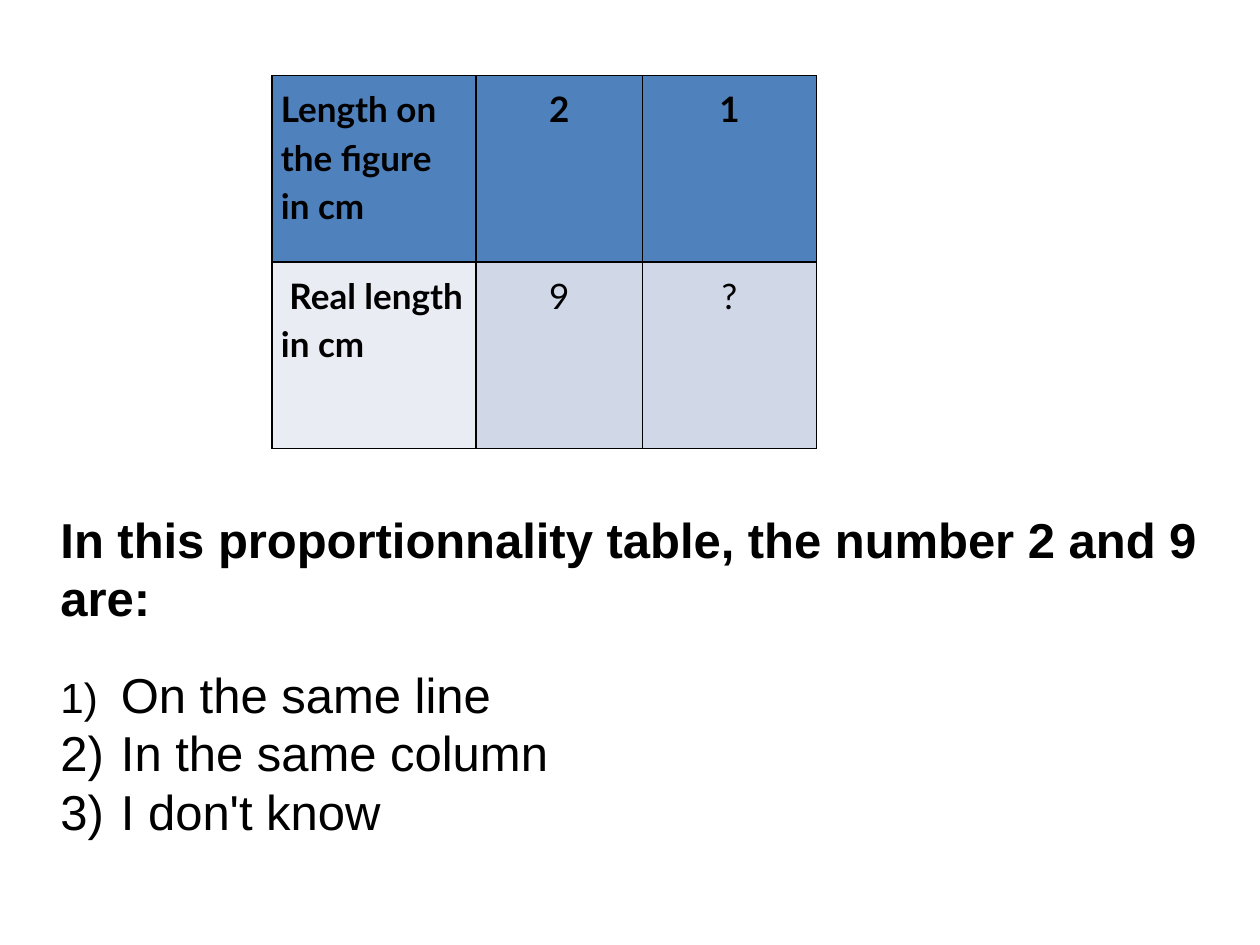
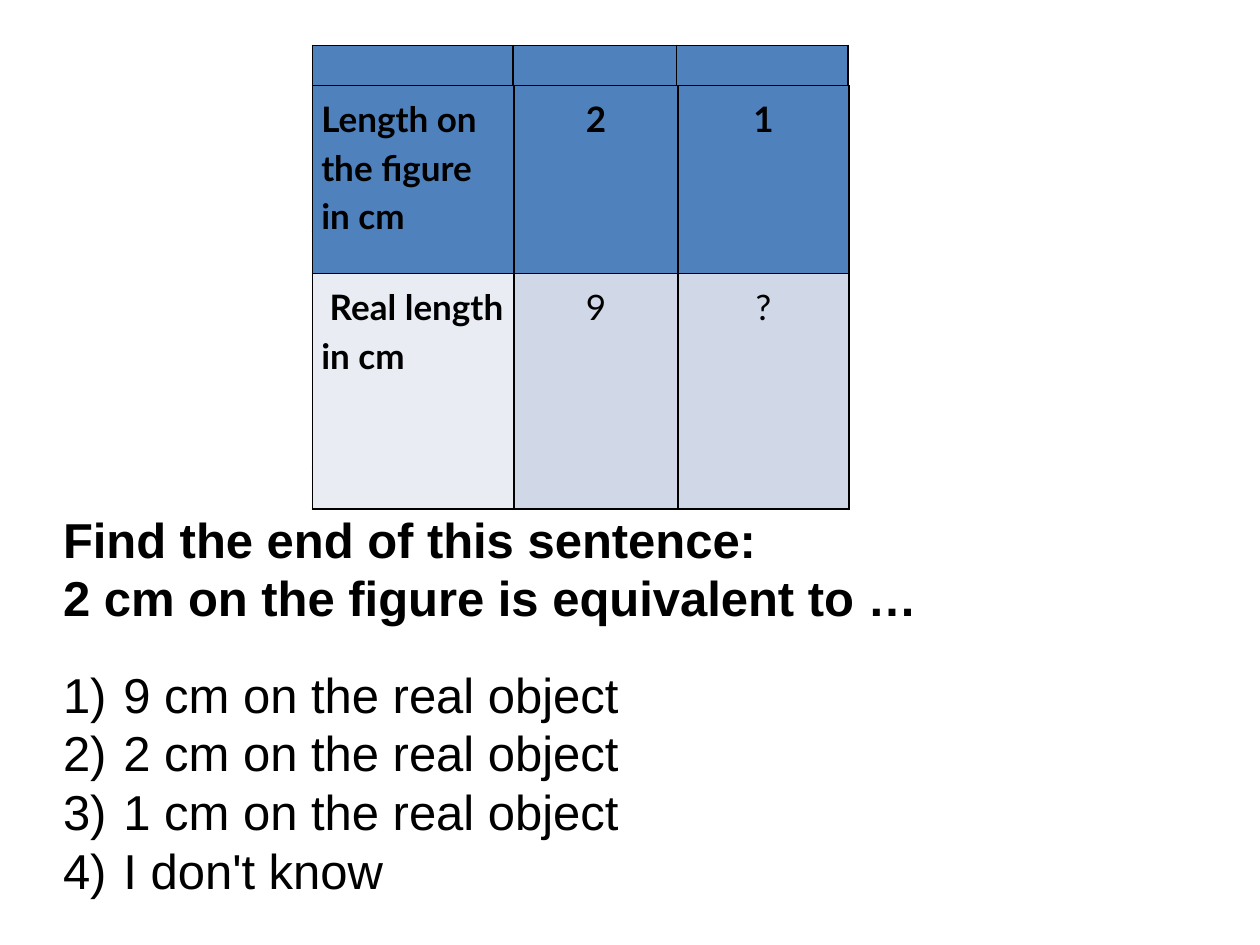
from lxml import etree
from pptx import Presentation
from pptx.dml.color import RGBColor
from pptx.enum.text import MSO_ANCHOR, MSO_AUTO_SIZE, PP_ALIGN
from pptx.oxml.ns import qn
from pptx.util import Inches, Pt

TOP = MSO_ANCHOR.TOP
FIXED = MSO_AUTO_SIZE.NONE
LEFT, CENTER = PP_ALIGN.LEFT, PP_ALIGN.CENTER
BLACK, HEAD, LABEL, VALUE = "000000", "4F81BD", "E9ECF3", "D0D8E7"
LENGTHS = [
    ["Length on the figure in cm", "2", "1"],
    [" Real length in cm", "9", "?"],
]
EMPTY = [[""] * 3] * 2


def color(code):
    return RGBColor.from_string(code)


def style(para, font, size, bold, align):
    para.font.name = font
    para.font.size = Pt(size)
    para.font.bold = bold
    para.font.color.rgb = color(BLACK)
    para.alignment = align


def place(shape, left, top, width, height):
    shape.left, shape.top = Inches(left), Inches(top)
    shape.width, shape.height = Inches(width), Inches(height)
    frame = shape.text_frame
    frame.word_wrap = True
    frame.auto_size = FIXED
    frame.vertical_anchor = TOP
    return frame


def number(para, scale):
    props = para._p.get_or_add_pPr()
    props.set("marL", str(Inches(0.48)))
    props.set("indent", str(-Inches(0.48)))
    size = etree.SubElement(props, qn("a:buSzPct"))
    size.set("val", str(scale * 1000))
    mark = etree.SubElement(props, qn("a:buAutoNum"))
    mark.set("type", "arabicParenR")


def ask(slide, left, width, question, answers, first=100):
    frame = place(slide.shapes.title, left, 3.99, width, 1.1)
    frame.text = question
    for para in frame.paragraphs:
        style(para, "Arial", 28, True, LEFT)
    frame = place(slide.placeholders[1], left, 5.22, width, 2.05)
    frame.text = "\n".join(answers)
    for i, para in enumerate(frame.paragraphs):
        style(para, "Arial", 28, False, LEFT)
        para.space_before = Pt(0)
        number(para, 100 if i else first)


def border(cell):
    props = cell._tc.get_or_add_tcPr()
    for side in ("lnL", "lnR", "lnT", "lnB"):
        line = etree.SubElement(props, qn(f"a:{side}"), w=str(Pt(0.96)))
        fill = etree.SubElement(line, qn("a:solidFill"))
        etree.SubElement(fill, qn("a:srgbClr"), val=BLACK)


def grid(slide, left, top, cols, rows, data):
    frame = slide.shapes.add_table(
        len(rows), len(cols), Inches(left), Inches(top),
        Inches(sum(cols)), Inches(sum(rows)))
    table = frame.table
    for col, width in zip(table.columns, cols):
        col.width = Inches(width)
    for r, height in enumerate(rows):
        table.rows[r].height = Inches(height)
        for c, text in enumerate(data[r]):
            cell = table.cell(r, c)
            border(cell)
            cell.fill.solid()
            cell.fill.fore_color.rgb = color(
                HEAD if r == 0 else VALUE if c else LABEL)
            cell.margin_left = cell.margin_right = Inches(0.07)
            cell.text = text
            para = cell.text_frame.paragraphs[0]
            style(para, "Lato", 20, r == 0 or c == 0, CENTER if c else LEFT)
            para.line_spacing = 1.15


def main():
    deck = Presentation()
    deck.slide_width, deck.slide_height = Inches(10), Inches(7.5)
    layout = deck.slide_layouts[1]

    slide = deck.slides.add_slide(layout)
    grid(slide, 2.16, 0.6, [1.62, 1.32, 1.38], [1.48, 1.48], LENGTHS)
    ask(slide, 0.38, 9.29,
        "In this proportionnality table, the number 2 and 9 are:",
        ["On the same line", "In the same column", "I don't know"], 86)

    slide = deck.slides.add_slide(layout)
    grid(slide, 2.48, 0.36, [1.59, 1.3, 1.36], [1.48, 1.87], EMPTY)
    grid(slide, 2.48, 0.68, [1.6, 1.3, 1.36], [1.49, 1.87], LENGTHS)
    ask(slide, 0.4, 9.13,
        "Find the end of this sentence:\n"
        "2 cm on the figure is equivalent to …",
        [f"{n} cm on the real object" for n in (9, 2, 1)] + ["I don't know"])

    deck.save("out.pptx")


if __name__ == "__main__":
    main()
